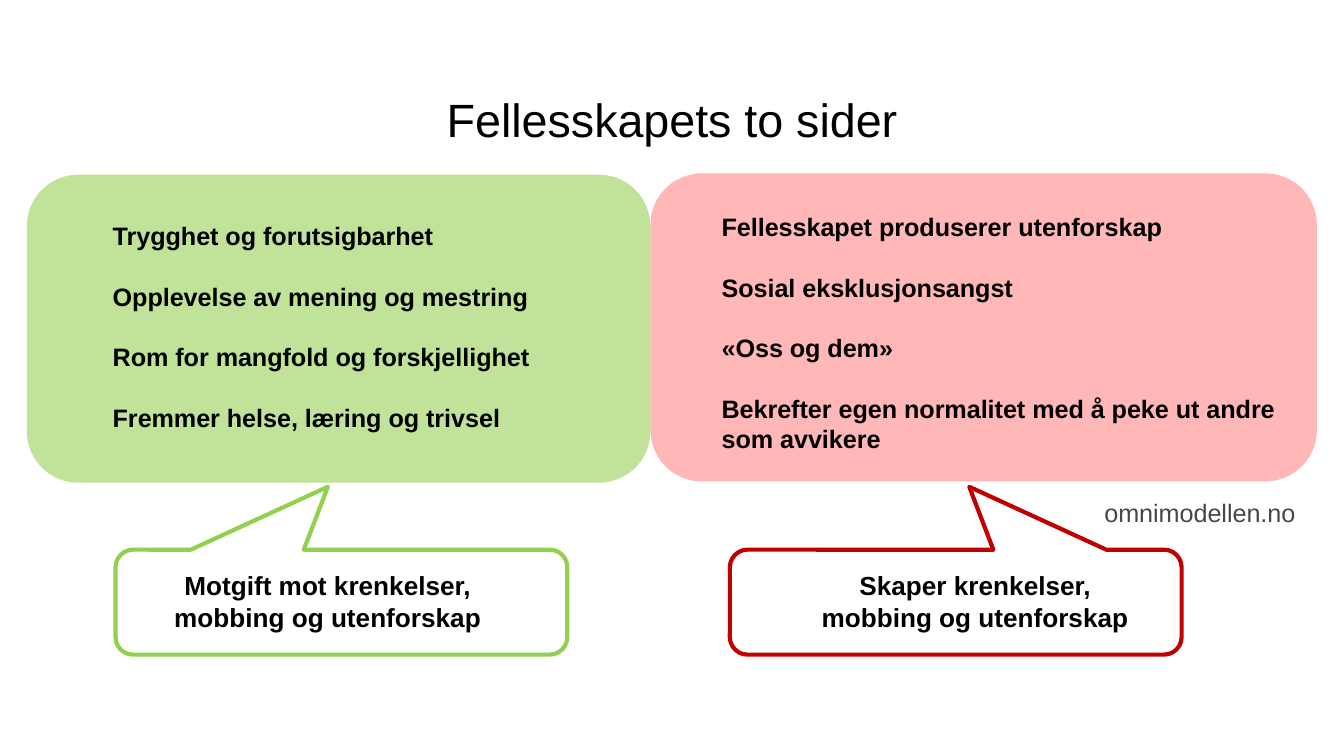
from collections import namedtuple
from dataclasses import dataclass

from pptx import Presentation
from pptx.dml.color import RGBColor
from pptx.enum.shapes import MSO_SHAPE as Shape
from pptx.enum.text import MSO_ANCHOR as Anchor, PP_ALIGN as Align
from pptx.util import Pt

Box = namedtuple("Box", "left top width height")


@dataclass(frozen=True)
class Theme:
    font: str = "Arial"
    ink: str = "000000"
    muted: str = "474747"
    safe_fill: str = "C0E399"
    safe_line: str = "92D050"
    risk_fill: str = "FFB7B7"
    risk_line: str = "C00000"
    title: float = 25
    body: float = 13.5
    label: float = 14
    leading: float = 1.2
    outline: float = 2.25


THEME = Theme()


def points(box):
    return [Pt(length) for length in box]


def add_text(page, box, lines, size=THEME.body, color=THEME.ink, bold=False,
             align=Align.LEFT, anchor=Anchor.TOP, inset=(7.2, 3.6), pitch=None, gap=0):
    frame = page.shapes.add_textbox(*points(box)).text_frame
    frame.word_wrap = True
    frame.vertical_anchor = anchor
    frame.margin_left = frame.margin_right = Pt(inset[0])
    frame.margin_top = frame.margin_bottom = Pt(inset[1])
    for index, line in enumerate(lines):
        para = frame.paragraphs[0] if index == 0 else frame.add_paragraph()
        para.alignment = align
        para.line_spacing = Pt(pitch or size * THEME.leading)
        para.space_before = Pt(gap if index else 0)
        span = para.add_run()
        span.text = line
        span.font.name = THEME.font
        span.font.size = Pt(size)
        span.font.bold = bold
        span.font.color.rgb = RGBColor.from_string(color)


def add_panel(page, box, fill, lines, text_left, text_top, text_width):
    panel = page.shapes.add_shape(Shape.ROUNDED_RECTANGLE, *points(box))
    panel.shadow.inherit = False
    panel.fill.solid()
    panel.fill.fore_color.rgb = RGBColor.from_string(fill)
    panel.line.fill.background()
    text_box = Box(box.left + text_left, box.top + text_top, text_width, 122)
    add_text(page, text_box, lines, bold=True, gap=THEME.body * THEME.leading)


def add_callout(page, box, color, tip, lines, text_left, text_width):
    callout = page.shapes.add_shape(Shape.ROUNDED_RECTANGULAR_CALLOUT, *points(box))
    callout.shadow.inherit = False
    callout.fill.background()
    callout.line.color.rgb = RGBColor.from_string(color)
    callout.line.width = Pt(THEME.outline)
    callout.adjustments[0] = tip
    callout.adjustments[1] = -1.1
    text_box = Box(box.left + text_left, box.top + 7.2, text_width, 41)
    add_text(page, text_box, lines, size=THEME.label, bold=True, align=Align.CENTER)


def main():
    deck = Presentation()
    deck.slide_width, deck.slide_height = Pt(720), Pt(405)
    page = deck.slides.add_slide(deck.slide_layouts[6])

    add_panel(page, Box(348.5, 92.9, 357, 165), THEME.risk_fill, [
        "Fellesskapet produserer utenforskap",
        "Sosial eksklusjonsangst",
        "«Oss og dem»",
        "Bekrefter egen normalitet med å peke ut andre som avvikere",
    ], text_left=31, text_top=17, text_width=315.4)
    add_panel(page, Box(14.4, 93.6, 334, 165), THEME.safe_fill, [
        "Trygghet og forutsigbarhet",
        "Opplevelse av mening og mestring",
        "Rom for mangfold og forskjellighet",
        "Fremmer helse, læring og trivsel",
    ], text_left=38.9, text_top=21, text_width=251.3)

    add_text(page, Box(0, 0, 720, 78.5), ["Fellesskapets to sider"], size=THEME.title,
             align=Align.CENTER, anchor=Anchor.BOTTOM, inset=(0, 0), pitch=28)

    add_callout(page, Box(61.9, 294.5, 242, 56.2), THEME.safe_line, -0.03,
                ["Motgift mot krenkelser, mobbing og utenforskap"],
                text_left=11.5, text_width=204.5)
    add_callout(page, Box(391, 294.5, 242, 56.2), THEME.risk_line, 0.03,
                ["Skaper krenkelser,", "mobbing og utenforskap"],
                text_left=0, text_width=262.8)

    add_text(page, Box(584.6, 262.8, 135.4, 23.8), ["omnimodellen.no"], color=THEME.muted)
    deck.save("out.pptx")


if __name__ == "__main__":
    main()
